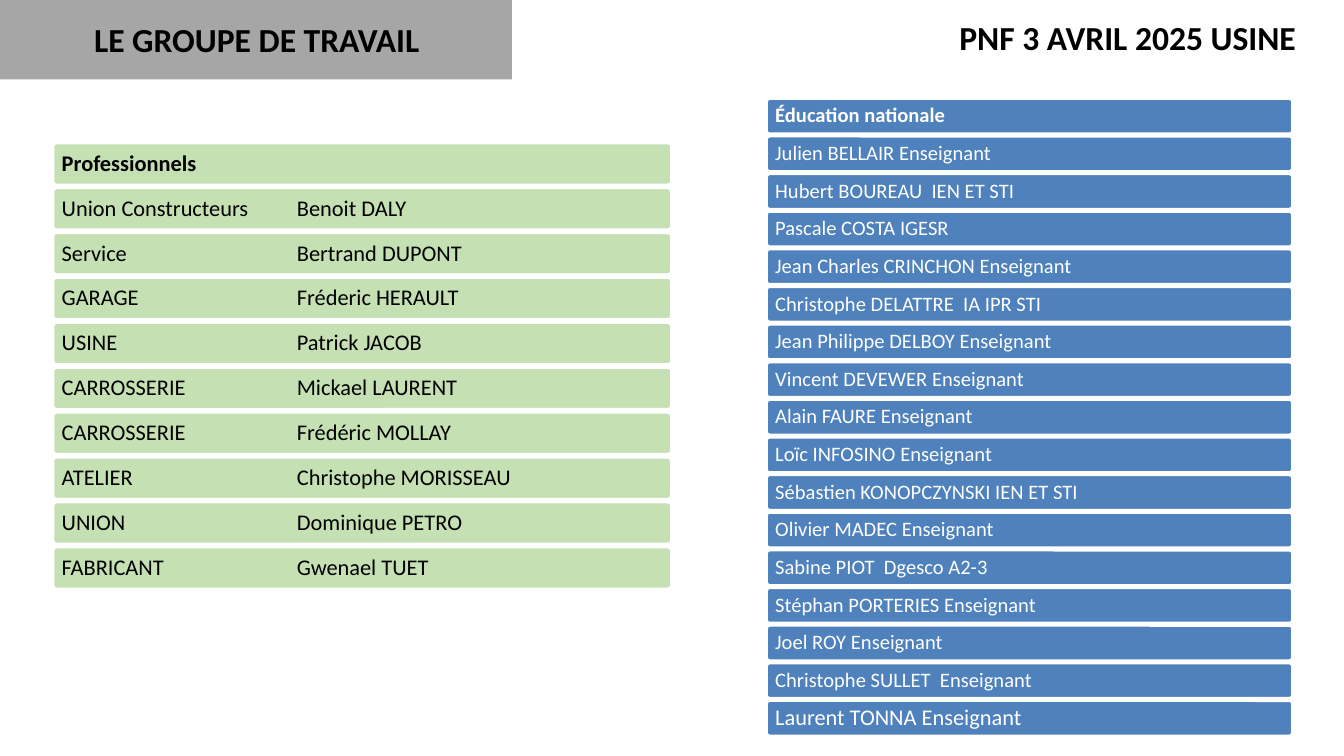
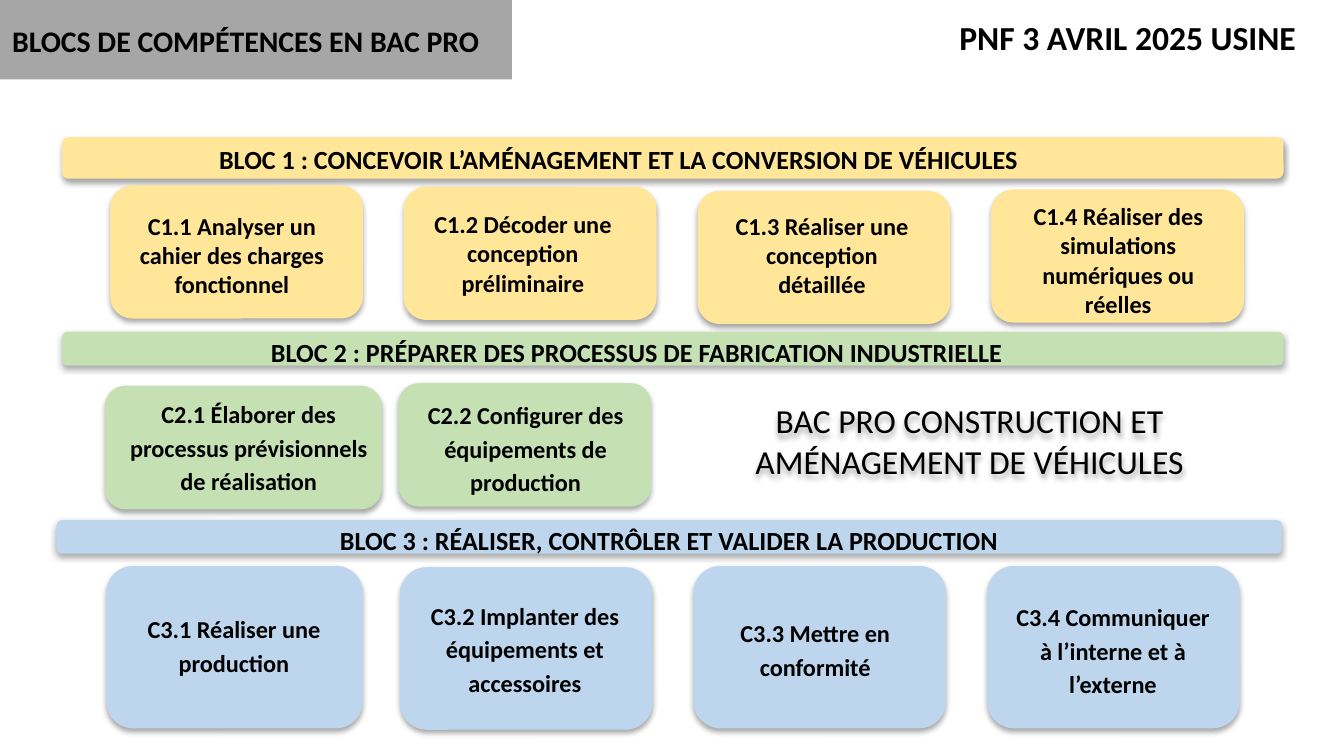
from dataclasses import dataclass

from lxml import etree
from pptx import Presentation
from pptx.dml.color import RGBColor
from pptx.enum.shapes import MSO_SHAPE
from pptx.enum.text import MSO_ANCHOR, MSO_AUTO_SIZE, PP_ALIGN
from pptx.oxml.ns import qn
from pptx.util import Inches, Pt

RECT = MSO_SHAPE.RECTANGLE
ROUNDED = MSO_SHAPE.ROUNDED_RECTANGLE
CARD = MSO_SHAPE.FLOWCHART_ALTERNATE_PROCESS
LEFT, CENTER = PP_ALIGN.LEFT, PP_ALIGN.CENTER
TOP, MIDDLE = MSO_ANCHOR.TOP, MSO_ANCHOR.MIDDLE
GROW = MSO_AUTO_SIZE.SHAPE_TO_FIT_TEXT
TITLE_ONLY = 5

# The slide is a grid of 100 columns by 56.25 rows
CELL = Inches(0.1)
COLS, ROWS = 100, 56.25


@dataclass(frozen=True)
class Theme:
    font: str = "Calibri"
    black: str = "000000"
    white: str = "FFFFFF"
    grey: str = "A6A6A6"
    green: str = "C5E0B3"
    blue: str = "4F81BD"
    yellow: str = "FFE698"
    sky: str = "BDD6EE"
    title: int = 18
    long_title: int = 16
    heading: int = 14
    card: int = 13
    row: int = 12
    small_row: int = 11


T = Theme()


@dataclass(frozen=True)
class Box:
    x: float
    y: float
    w: float
    h: float

    def inside(self, x, y, w, h):
        return Box(self.x + x, self.y + y, w, h)

    def emu(self):
        return [int(v * CELL) for v in (self.x, self.y, self.w, self.h)]


HEADER = Box(0, 0, COLS, 5.9)
PROFESSIONALS = Box(3.9, 10.6, 46.1, 33.4)
EDUCATION = Box(57, 7.3, 39.2, 47.6)
NAME_TAB = 1.75

PROFESSIONAL_ROWS = [
    "Professionnels",
    "Union Constructeurs\tBenoit DALY",
    "Service\tBertrand DUPONT",
    "GARAGE\tFréderic HERAULT",
    "USINE\tPatrick JACOB",
    "CARROSSERIE\tMickael LAURENT",
    "CARROSSERIE\tFrédéric MOLLAY",
    "ATELIER\tChristophe MORISSEAU",
    "UNION\tDominique PETRO",
    "FABRICANT\tGwenael TUET",
]
EDUCATION_ROWS = [
    "Éducation nationale",
    "Julien BELLAIR Enseignant",
    "Hubert BOUREAU  IEN ET STI",
    "Pascale COSTA IGESR",
    "Jean Charles CRINCHON Enseignant",
    "Christophe DELATTRE  IA IPR STI",
    "Jean Philippe DELBOY Enseignant",
    "Vincent DEVEWER Enseignant",
    "Alain FAURE Enseignant",
    "Loïc INFOSINO Enseignant",
    "Sébastien KONOPCZYNSKI IEN ET STI",
    "Olivier MADEC Enseignant",
    "Sabine PIOT  Dgesco A2-3",
    "Stéphan PORTERIES Enseignant",
    "Joel ROY Enseignant",
    "Christophe SULLET  Enseignant",
    "Laurent TONNA Enseignant",
]

# Each card: text, top below the bar, width, caption box within the card
CARD_PITCH = 21.85
BLOCKS = [
    dict(bar=Box(4.6, 10.2, 90.9, 3.1), color=T.yellow, first=3.6, height=9.9,
         heading="BLOC 1 : CONCEVOIR L’AMÉNAGEMENT ET LA CONVERSION DE VÉHICULES",
         heading_at=(-2, -0.4, 86.9, 3.6), spacing=1,
         cards=[
             ("C1.1 Analyser un cahier des charges fonctionnel", 3.6, 18.8, (0.2, 1.4, 17.7, 7.6)),
             ("C1.2 Décoder une conception préliminaire", 3.7, 18.8, (0, 1.2, 17.7, 7.6)),
             ("C1.3 Réaliser une conception détaillée", 4, 18.8, (1, 1, 16.5, 7.6)),
             ("C1.4 Réaliser des simulations numériques ou réelles", 3.9, 18.8, (1.2, 0.4, 16.5, 9.8)),
         ]),
    dict(bar=Box(4.6, 24.7, 90.9, 2.5), color=T.green, first=3.2, height=9.2,
         heading="BLOC 2 : PRÉPARER DES PROCESSUS DE FABRICATION INDUSTRIELLE",
         heading_at=(0.9, -0.5, 83.8, 3.5), spacing=1.15,
         cards=[
             ("C2.1 Élaborer des processus prévisionnels de réalisation", 4, 20.6, (0.8, 0.2, 19.8, 8.4)),
             ("C2.2 Configurer des équipements de production", 3.8, 18.8, (0.6, 0.5, 17.7, 8.4)),
         ]),
    dict(bar=Box(4.2, 38.7, 91.2, 2.5), color=T.sky, first=3.7, height=12.1,
         heading="BLOC 3 : RÉALISER, CONTRÔLER ET VALIDER LA PRODUCTION",
         heading_at=(0, -0.5, 91.2, 3.5), spacing=1.15,
         cards=[
             ("C3.1 Réaliser une production", 3.4, 19.1, (1.1, 2.8, 16.8, 5.9)),
             ("C3.2 Implanter des équipements et accessoires", 3.5, 18.8, (0.2, 1.7, 18.2, 8.4)),
             ("C3.3 Mettre en conformité", 3.4, 18.8, (0.6, 3.1, 16.9, 5.9)),
             ("C3.4 Communiquer à l’interne et à l’externe", 3.4, 18.8, (0.9, 1.9, 16.9, 8.4)),
         ]),
]


def rgb(color):
    return RGBColor.from_string(color)


def write(sp, text, size, color=T.black, bold=True, align=CENTER, anchor=TOP,
          spacing=1.0, wrap=True):
    tf = sp.text_frame
    tf.word_wrap = wrap
    tf.vertical_anchor = anchor
    p = tf.paragraphs[0]
    p.text = text
    p.alignment = align
    p.line_spacing = spacing
    for r in p.runs:
        r.font.name = T.font
        r.font.size = Pt(size)
        r.font.bold = bold
        r.font.color.rgb = rgb(color)
    return p


def add_shape(s, kind, box, fill, outline=None):
    sp = s.shapes.add_shape(kind, *box.emu())
    sp.fill.solid()
    sp.fill.fore_color.rgb = rgb(fill)
    if outline:
        sp.line.color.rgb = rgb(outline)
        sp.line.width = Pt(2)
    else:
        sp.line.fill.background()
    sp.shadow.inherit = False
    return sp


def add_text(s, box, text, size, **style):
    sp = s.shapes.add_textbox(*box.emu())
    write(sp, text, size, **style)
    sp.text_frame.auto_size = GROW
    return sp


def add_shadow(sp):
    sp.shadow.inherit = False
    effects = sp._element.spPr.find(qn("a:effectLst"))
    shadow = etree.SubElement(effects, qn("a:outerShdw"), blurRad=str(Pt(3.1)),
                              dist=str(Pt(1.8)), dir="5400000", rotWithShape="0")
    color = etree.SubElement(shadow, qn("a:srgbClr"), val=T.black)
    etree.SubElement(color, qn("a:alpha"), val="35000")


def add_tab(p, inches):
    tabs = etree.SubElement(p._p.get_or_add_pPr(), qn("a:tabLst"))
    etree.SubElement(tabs, qn("a:tab"), pos=str(Inches(inches)), algn="l")


# Header: grey band, title and event label
def add_header(s, box, text, size, title_at):
    band = add_shape(s, RECT, box.inside(0, 0, 38.1, box.h), T.grey)
    s.shapes._spTree.insert(2, band._element)
    label = add_shape(s, RECT, box.inside(70.4, 0.8, 29.6, 4), T.white)
    write(label, "PNF 3 AVRIL 2025 USINE", T.title, align=LEFT)
    title = s.shapes.title
    title.left, title.top, title.width, title.height = box.inside(*title_at).emu()
    write(title, text, size, align=LEFT, wrap=False)
    title.text_frame.auto_size = GROW


# Stack of equal rounded rows, the first one bold
def add_rows(s, box, rows, fill, color, sizes, row_height):
    pitch = box.h / len(rows)
    for i, (text, size) in enumerate(zip(rows, sizes)):
        sp = add_shape(s, ROUNDED, box.inside(0, i * pitch, box.w, row_height),
                       fill, T.white)
        sp.adjustments[0] = 0.1
        p = write(sp, text, size, color, i == 0, LEFT, MIDDLE, 0.9)
        tf = sp.text_frame
        tf.margin_left = tf.margin_right = Inches(0.06)
        tf.margin_top = tf.margin_bottom = Inches(0.05)
        if "\t" in text:
            add_tab(p, NAME_TAB)


# Skill block: a heading bar and its cards
def add_block(s, bar, color, first, height, heading, heading_at, spacing, cards):
    add_shadow(add_shape(s, CARD, bar, color))
    add_text(s, bar.inside(*heading_at), heading, T.heading, spacing=1.15)
    for i, (text, top, width, caption_at) in enumerate(cards):
        card = bar.inside(first + i * CARD_PITCH, top, width, height)
        add_shadow(add_shape(s, CARD, card, color))
        add_text(s, card.inside(*caption_at), text, T.card, spacing=spacing)


def team_slide(prs):
    s = prs.slides.add_slide(prs.slide_layouts[TITLE_ONLY])
    add_header(s, HEADER, "LE GROUPE DE TRAVAIL", T.title, (6, 0.9, 26.5, 4))
    add_rows(s, PROFESSIONALS, PROFESSIONAL_ROWS, T.green, T.black,
             [T.row] * len(PROFESSIONAL_ROWS), 3.2)
    small = [T.small_row] * (len(EDUCATION_ROWS) - 1)
    add_rows(s, EDUCATION, EDUCATION_ROWS, T.blue, T.white, small + [T.row], 2.7)


def skills_slide(prs):
    s = prs.slides.add_slide(prs.slide_layouts[TITLE_ONLY])
    add_header(s, HEADER, "BLOCS DE COMPÉTENCES EN BAC PRO", T.long_title,
               (-0.1, 1.2, 37.2, 3.7))
    for block in BLOCKS:
        add_block(s, **block)
    diploma = add_text(s, Box(49.8, 29.3, 44.7, 7.1),
                       "BAC PRO CONSTRUCTION ET AMÉNAGEMENT DE VÉHICULES",
                       T.title, bold=False)
    add_shadow(diploma)


def main():
    prs = Presentation()
    prs.slide_width, prs.slide_height = int(COLS * CELL), int(ROWS * CELL)
    team_slide(prs)
    skills_slide(prs)
    prs.save("out.pptx")


if __name__ == "__main__":
    main()
